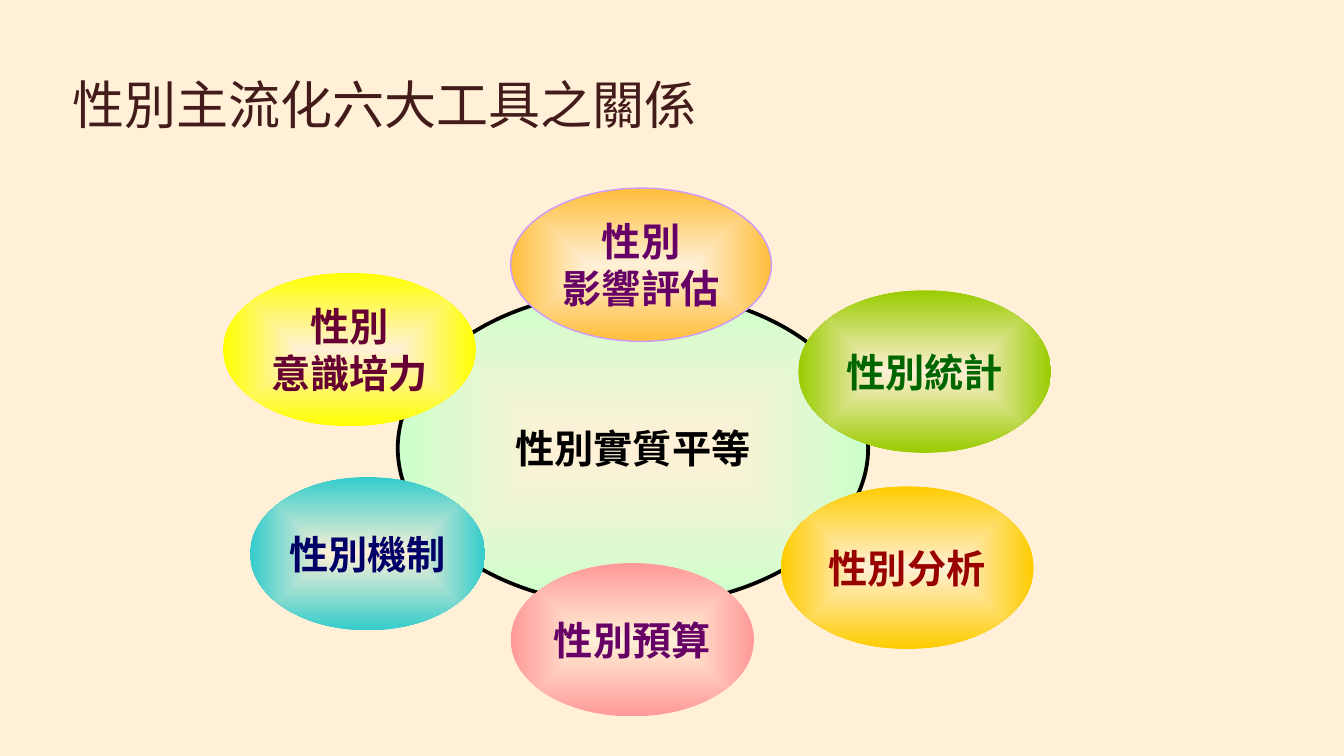
from dataclasses import dataclass
from typing import Optional

from lxml.etree import SubElement
from pptx import Presentation
from pptx.dml.color import RGBColor
from pptx.enum.shapes import MSO_SHAPE
from pptx.enum.text import MSO_ANCHOR, PP_ALIGN
from pptx.oxml.ns import qn
from pptx.slide import Slide
from pptx.util import Pt

CREAM = RGBColor(0xFF, 0xF0, 0xD7)
BROWN = RGBColor(0x42, 0x1B, 0x1A)
BLACK = RGBColor(0x00, 0x00, 0x00)
MINT = RGBColor(0xCC, 0xFF, 0xCC)
ORANGE = RGBColor(0xFF, 0xBE, 0x3B)
LILAC = RGBColor(0xCC, 0x99, 0xFF)
LIME = RGBColor(0x99, 0xCC, 0x00)
PINK = RGBColor(0xFF, 0x99, 0x99)
GOLD = RGBColor(0xFF, 0xCC, 0x00)
TEAL = RGBColor(0x33, 0xCC, 0xCC)
YELLOW = RGBColor(0xFF, 0xFF, 0x00)
PURPLE = RGBColor(0x66, 0x00, 0x66)
GREEN = RGBColor(0x00, 0x66, 0x00)
RED = RGBColor(0x99, 0x00, 0x00)
NAVY = RGBColor(0x00, 0x00, 0x66)
WINE = RGBColor(0x66, 0x00, 0x33)

TITLE_FONT = "Noto Sans CJK SC"
LABEL_FONT = "Arial"
LABEL_SIZE = 21
TOOL_WIDTH = 135.4
LOW, TALL = 82.1, 87.1


@dataclass(frozen=True)
class Oval:
    lines: tuple[str, ...]
    left: float
    top: float
    width: float
    height: float
    edge: RGBColor
    text: RGBColor
    outline: Optional[RGBColor] = None
    outline_width: float = 0


OVALS = (
    Oval(("性別實質平等",), 213.1, 155.5, 252, 169.2, MINT, BLACK, BLACK, 2),
    Oval(("性別", "影響評估"), 273.6, 100.8, 139.7, LOW, ORANGE, PURPLE, LILAC, 0.75),
    Oval(("性別統計",), 427.7, 155.5, TOOL_WIDTH, TALL, LIME, GREEN),
    Oval(("性別預算",), 273.6, 301.7, 130.3, LOW, PINK, PURPLE),
    Oval(("性別分析",), 418.3, 260.6, TOOL_WIDTH, TALL, GOLD, RED),
    Oval(("性別機制",), 133.9, 255.6, 126, LOW, TEAL, NAVY),
    Oval(("性別", "意識培力"), 119.5, 146.2, TOOL_WIDTH, LOW, YELLOW, WINE),
)


def add_run(paragraph, text: str, font: str, size: float, color: RGBColor, bold: bool) -> None:
    run = paragraph.add_run()
    run.text = text
    run.font.size = Pt(size)
    run.font.bold = bold
    run.font.color.rgb = color
    run.font.name = font
    SubElement(run.font._element, qn("a:ea"), typeface=font)


def fill_from_centre(shape, centre: RGBColor, edge: RGBColor) -> None:
    """Fill with a gradient that spreads from the middle along the shape."""
    shape.fill.gradient()
    for stop, color in zip(shape.fill.gradient_stops, (centre, edge)):
        stop.color.rgb = color
    gradient = shape._element.spPr.find(qn("a:gradFill"))
    gradient.remove(gradient.find(qn("a:lin")))
    spread = SubElement(gradient, qn("a:path"), path="shape")
    SubElement(spread, qn("a:fillToRect"), l="50000", t="50000", r="50000", b="50000")


def add_title(slide: Slide, text: str) -> None:
    box = slide.shapes.add_textbox(Pt(31.7), Pt(17.3), Pt(445.7), Pt(76.3))
    frame = box.text_frame
    frame.word_wrap = True
    frame.vertical_anchor = MSO_ANCHOR.MIDDLE
    frame.margin_left = frame.margin_right = Pt(7.2)
    frame.margin_top = frame.margin_bottom = Pt(7.2)
    add_run(frame.paragraphs[0], text, TITLE_FONT, 27.9, BROWN, False)


def add_oval(slide: Slide, oval: Oval) -> None:
    shape = slide.shapes.add_shape(
        MSO_SHAPE.OVAL, Pt(oval.left), Pt(oval.top), Pt(oval.width), Pt(oval.height)
    )
    shape.shadow.inherit = False
    fill_from_centre(shape, CREAM, oval.edge)
    if oval.outline is None:
        shape.line.fill.background()
    else:
        shape.line.color.rgb = oval.outline
        shape.line.width = Pt(oval.outline_width)
    frame = shape.text_frame
    frame.word_wrap = False
    frame.vertical_anchor = MSO_ANCHOR.MIDDLE
    for index, line in enumerate(oval.lines):
        paragraph = frame.add_paragraph() if index else frame.paragraphs[0]
        paragraph.alignment = PP_ALIGN.CENTER
        add_run(paragraph, line, LABEL_FONT, LABEL_SIZE, oval.text, True)


def main() -> None:
    presentation = Presentation()
    presentation.slide_width = Pt(720)
    presentation.slide_height = Pt(405)
    slide = presentation.slides.add_slide(presentation.slide_layouts[6])
    slide.background.fill.solid()
    slide.background.fill.fore_color.rgb = CREAM
    add_title(slide, "性別主流化六大工具之關係")
    for oval in OVALS:
        add_oval(slide, oval)
    presentation.save("out.pptx")


if __name__ == "__main__":
    main()
